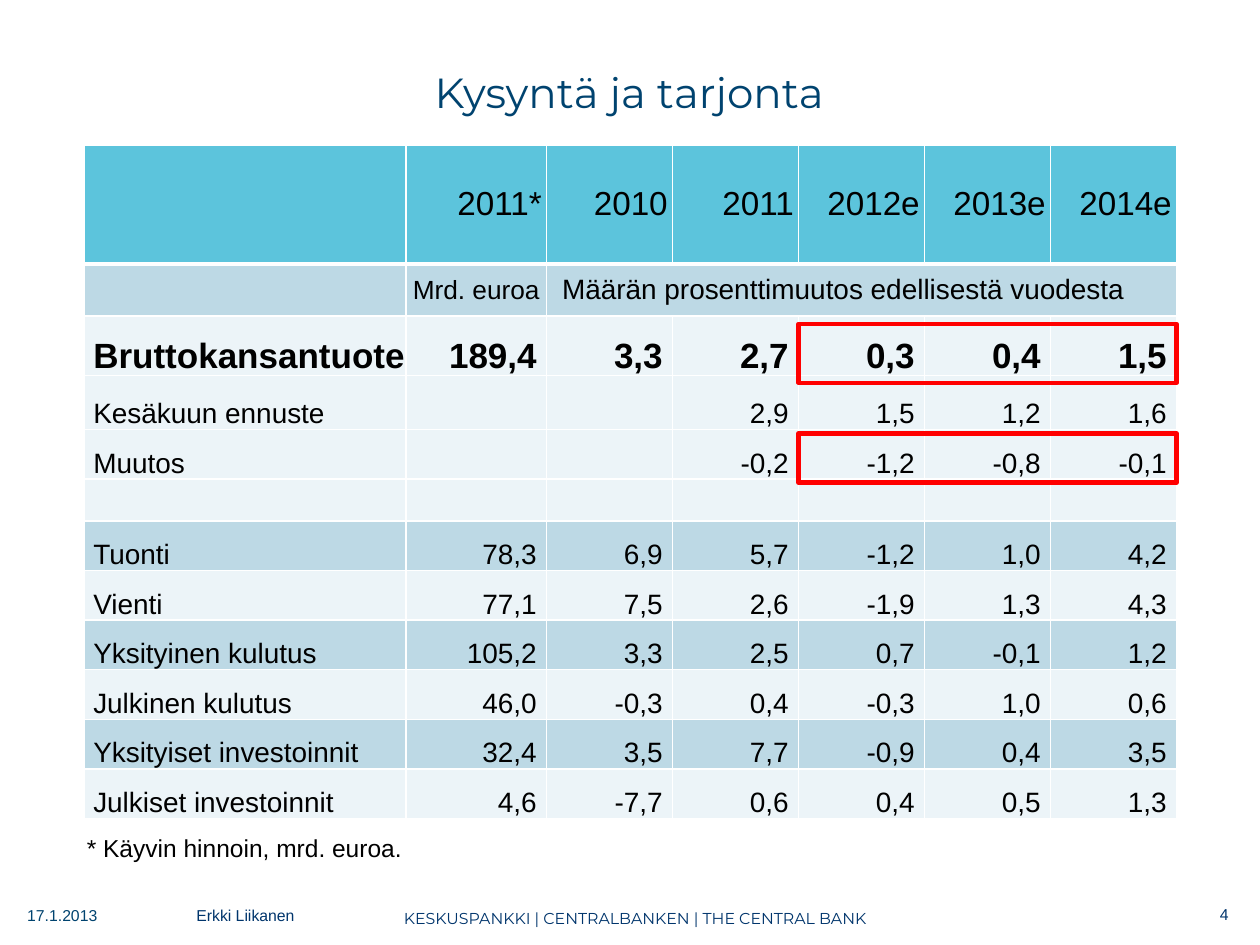
from dataclasses import dataclass
from typing import Any

from lxml import etree
from pptx import Presentation
from pptx import util as u
from pptx.dml.color import RGBColor
from pptx.enum import shapes, text
from pptx.oxml import ns

LEFT, CENTER, RIGHT = text.PP_ALIGN.LEFT, text.PP_ALIGN.CENTER, text.PP_ALIGN.RIGHT
MIDDLE, BOTTOM = text.MSO_ANCHOR.MIDDLE, text.MSO_ANCHOR.BOTTOM


@dataclass(frozen=True)
class Theme:
    heading_font: str = "Montserrat"
    body_font: str = "Arial"
    ink: str = "000000"
    title: str = "00436F"
    footer: str = "00356C"
    header_fill: str = "5CC4DC"
    dark_fill: str = "BDD9E5"
    light_fill: str = "ECF4F8"
    border: str = "FFFFFF"
    highlight: str = "FF0000"
    title_size: float = 24
    header_size: float = 19
    total_size: float = 20
    body_size: float = 16
    unit_size: float = 15
    note_size: float = 14
    footer_size: float = 9


T = Theme()


@dataclass(frozen=True)
class Box:
    left: float
    top: float
    width: float
    height: float

    def lengths(self) -> list[u.Length]:
        return [u.Cm(v) for v in (self.left, self.top, self.width, self.height)]


@dataclass(frozen=True)
class Label:
    words: str
    box: Box
    size: float = T.footer_size
    color: str = T.footer
    font: str = T.body_font
    align: Any = LEFT
    wrap: bool = True


@dataclass(frozen=True)
class Row:
    height: float
    fill: str
    values: tuple[str, ...] = ("",) * 7
    size: float = T.body_size
    bold: bool = False
    anchor: Any = BOTTOM
    right_inset: float = 0.2


def data_row(line: str, fill: str, height: float = 1.0, **formats: Any) -> Row:
    return Row(height, fill, tuple(line.split(";")), **formats)


TABLE_LEFT, TABLE_TOP = 1.7, 2.92
COLUMNS = (6.48, 2.84) + (2.54,) * 5
ROWS = (
    data_row(";2011*;2010;2011;2012e;2013e;2014e", T.header_fill, 2.4,
             size=T.header_size, anchor=MIDDLE, right_inset=0.1),
    data_row(";Mrd. euroa;Määrän prosenttimuutos edellisestä vuodesta;;;;",
             T.dark_fill, 1.05, anchor=MIDDLE),
    data_row("Bruttokansantuote;189,4;3,3;2,7;0,3;0,4;1,5", T.light_fill, 1.2,
             size=T.total_size, bold=True),
    data_row("Kesäkuun ennuste;;;2,9;1,5;1,2;1,6", T.light_fill, 1.09),
    data_row("Muutos;;;-0,2;-1,2;-0,8;-0,1", T.light_fill),
    Row(0.84, T.light_fill),
    data_row("Tuonti;78,3;6,9;5,7;-1,2;1,0;4,2", T.dark_fill),
    data_row("Vienti;77,1;7,5;2,6;-1,9;1,3;4,3", T.light_fill),
    data_row("Yksityinen kulutus;105,2;3,3;2,5;0,7;-0,1;1,2", T.dark_fill),
    data_row("Julkinen kulutus;46,0;-0,3;0,4;-0,3;1,0;0,6", T.light_fill),
    data_row("Yksityiset investoinnit;32,4;3,5;7,7;-0,9;0,4;3,5", T.dark_fill),
    data_row("Julkiset investoinnit;4,6;-7,7;0,6;0,4;0,5;1,3", T.light_fill),
)
FORECAST_LEFT = TABLE_LEFT + sum(COLUMNS[:4])
FORECAST_WIDTH = sum(COLUMNS[4:])
HIGHLIGHTS = (
    Box(FORECAST_LEFT, 6.53, FORECAST_WIDTH, 1.19),
    Box(FORECAST_LEFT, 8.74, FORECAST_WIDTH, 0.99),
)
LABELS = (
    Label("KESKUSPANKKI | CENTRALBANKEN | THE CENTRAL BANK",
          Box(1.47, 18.19, 22.66, 0.71), font=T.heading_font, align=CENTER),
    Label("* Käyvin hinnoin, mrd. euroa.", Box(1.5, 16.66, 6.91, 0.86),
          size=T.note_size, color=T.ink, wrap=False),
    Label("17.1.2013", Box(0.3, 18.14, 3.2, 0.91), color=T.title),
    Label("4", Box(22.3, 18.11, 2.72, 0.81), align=RIGHT),
    Label("Erkki Liikanen", Box(3.71, 18.14, 3.99, 0.91)),
)


def set_all(target: Any, formats: dict[str, Any]) -> None:
    for name, value in formats.items():
        setattr(target, name, value)


def write(tf: Any, words: str, size: float, color: str, font: str,
          align: Any, bold: bool = False) -> None:
    p = tf.paragraphs[0]
    p.alignment = align
    r = p.add_run()
    r.text = words
    set_all(r.font, {"size": u.Pt(size), "name": font, "bold": bold})
    r.font.color.rgb = RGBColor.from_string(color)


def add_borders(cell: Any, bottom: float) -> None:
    """Insert the four edges ahead of the fill, as the schema orders them."""
    tc_pr = cell._tc.get_or_add_tcPr()
    edges = {"lnL": 1, "lnR": 1, "lnT": 1, "lnB": bottom}
    for i, (tag, points) in enumerate(edges.items()):
        ln = etree.Element(ns.qn(f"a:{tag}"), w=str(int(u.Pt(points))))
        fill = etree.SubElement(ln, ns.qn("a:solidFill"))
        etree.SubElement(fill, ns.qn("a:srgbClr"), val=T.border)
        tc_pr.insert(i, ln)


def format_cell(cell: Any, row: Row, left: float, right: float) -> None:
    set_all(cell, {"margin_left": u.Cm(left), "margin_right": u.Cm(right),
                   "margin_top": 0, "margin_bottom": 0,
                   "vertical_anchor": row.anchor})
    cell.fill.solid()
    cell.fill.fore_color.rgb = RGBColor.from_string(row.fill)
    add_borders(cell, 3 if row is ROWS[0] else 1)


def add_demand_table(s: Any) -> None:
    box = Box(TABLE_LEFT, TABLE_TOP, sum(COLUMNS), sum(r.height for r in ROWS))
    table = s.shapes.add_table(len(ROWS), len(COLUMNS), *box.lengths()).table
    set_all(table, {"first_row": False, "horz_banding": False})
    for column, width in zip(table.columns, COLUMNS):
        column.width = u.Cm(width)
    for i, row in enumerate(ROWS):
        table.rows[i].height = u.Cm(row.height)
        for j, words in enumerate(row.values):
            cell = table.cell(i, j)
            left, right = (0.18, 0) if j == 0 else (0, row.right_inset)
            align, size = (RIGHT if j else LEFT), row.size
            if i == 1 and j == 1:
                right, align, size = 0, CENTER, T.unit_size
            elif i == 1 and j == 2:
                left, right, align = 0.31, 0, LEFT
            format_cell(cell, row, left, right)
            if words:
                write(cell.text_frame, words, size, T.ink, T.body_font,
                      align, row.bold)
            else:
                end = cell.text_frame.paragraphs[0]._p.get_or_add_endParaRPr()
                end.set("sz", "1200")
    table.cell(1, 2).merge(table.cell(1, len(COLUMNS) - 1))


def add_label(s: Any, label: Label) -> None:
    tf = s.shapes.add_textbox(*label.box.lengths()).text_frame
    tf.word_wrap = label.wrap
    write(tf, label.words, label.size, label.color, label.font, label.align)


def add_highlight(s: Any, box: Box) -> None:
    sp = s.shapes.add_shape(shapes.MSO_SHAPE.RECTANGLE, *box.lengths())
    sp.shadow.inherit = False
    sp.fill.background()
    sp.line.color.rgb = RGBColor.from_string(T.highlight)
    sp.line.width = u.Pt(2.5)


def add_title(s: Any, words: str) -> None:
    sp = s.shapes.title
    box = Box(1.47, 0.76, 22.43, 2.16).lengths()
    set_all(sp, dict(zip(("left", "top", "width", "height"), box)))
    sp.text_frame.vertical_anchor = MIDDLE
    write(sp.text_frame, words, T.title_size, T.title, T.heading_font, CENTER)


def main() -> None:
    prs = Presentation()
    set_all(prs, {"slide_width": u.Cm(25.4), "slide_height": u.Cm(19.05)})
    s = prs.slides.add_slide(prs.slide_layouts[5])
    add_title(s, "Kysyntä ja tarjonta")
    add_demand_table(s)
    for box in HIGHLIGHTS:
        add_highlight(s, box)
    for label in LABELS:
        add_label(s, label)
    prs.save("out.pptx")


if __name__ == "__main__":
    main()
